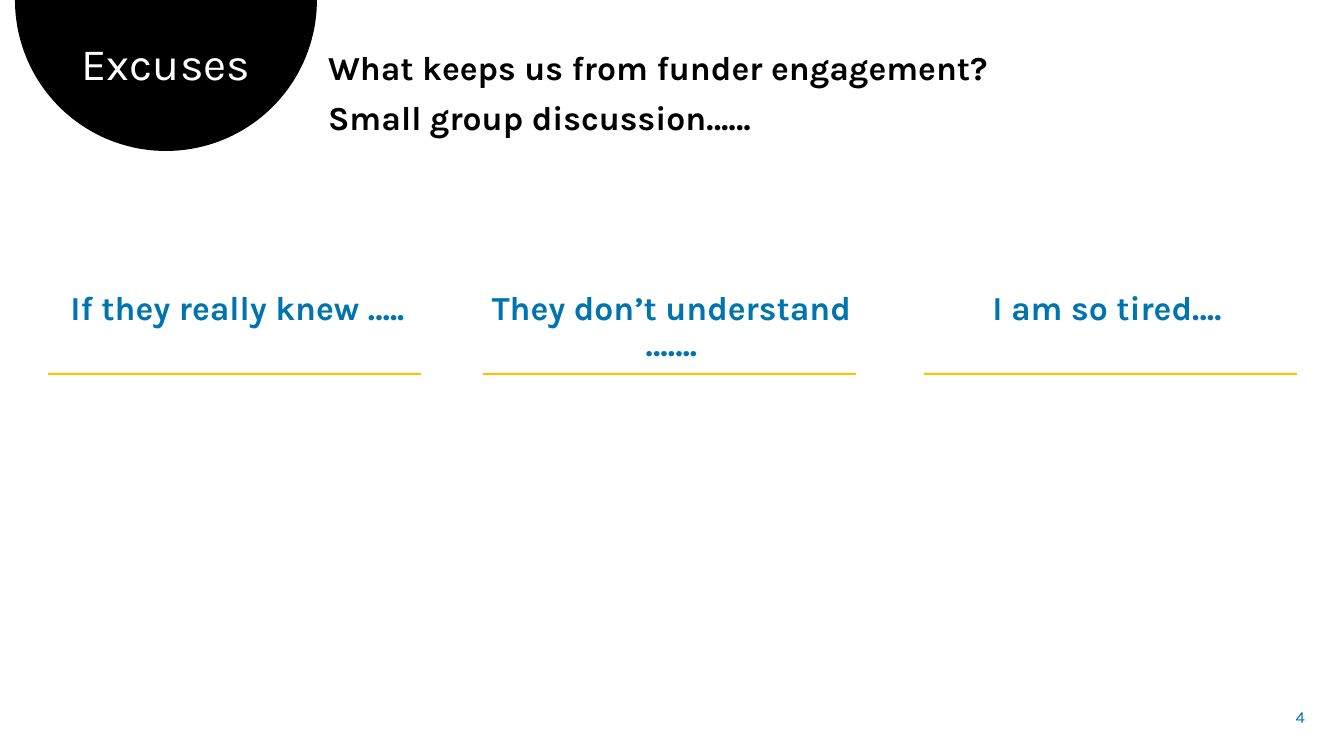
from math import cos, pi, sin

from lxml.etree import SubElement
from pptx import Presentation
from pptx.dml.color import RGBColor
from pptx.enum.shapes import MSO_SHAPE
from pptx.enum.text import MSO_ANCHOR, MSO_AUTO_SIZE, PP_ALIGN
from pptx.oxml.ns import qn
from pptx.util import Emu, Pt

SLIDE_WIDTH, SLIDE_HEIGHT = 1344, 756
SCALE = 12192000 / SLIDE_WIDTH
COLORS = {"black": "000000", "white": "FFFFFF", "blue": "0074AF", "gold": "FFC000"}
FONT = "Karla"
COMPARISON_LAYOUT = 4


def px(length):
    return Emu(round(length * SCALE))


def write_text(shape, *lines, size=24, color="blue", bold=False,
               align=PP_ALIGN.CENTER, anchor=MSO_ANCHOR.TOP, spacing=0.9, gap=0):
    """Fill a shape with one unbulleted paragraph per line, gap points apart."""
    frame = shape.text_frame
    frame.word_wrap = True
    frame.auto_size = MSO_AUTO_SIZE.NONE
    frame.vertical_anchor = anchor
    frame.text = "\n".join(lines)
    for index, paragraph in enumerate(frame.paragraphs):
        paragraph.alignment = align
        paragraph.line_spacing = spacing
        paragraph.space_before = Pt(gap if index else 0)
        properties = paragraph._p.get_or_add_pPr()
        properties.set("marL", "0")
        properties.set("indent", "0")
        SubElement(properties, qn("a:buNone"))
        font = paragraph.runs[0].font
        font.name, font.size, font.bold = FONT, Pt(size), bold
        font.color.rgb = RGBColor.from_string(COLORS[color])


class SlideBuilder:
    def __init__(self, presentation):
        layout = presentation.slide_layouts[COMPARISON_LAYOUT]
        self.slide = presentation.slides.add_slide(layout)
        self.shapes = self.slide.shapes

    def paint(self, shape, color):
        shape.shadow.inherit = False
        shape.fill.solid()
        shape.fill.fore_color.rgb = RGBColor.from_string(COLORS[color])
        shape.line.fill.background()

    def half_disc(self, center, radius, color, steps=90):
        """Hang a half disc from the top edge, behind everything else."""
        angles = [pi * step / steps for step in range(steps + 1)]
        points = [(px(center + radius * cos(angle)), px(radius * sin(angle)))
                  for angle in angles]
        builder = self.shapes.build_freeform(*points[0])
        builder.add_line_segments(points[1:], close=True)
        shape = builder.convert_to_shape()
        self.paint(shape, color)
        shape.element.getparent().insert(2, shape.element)

    def bar(self, left, top, width, height, color):
        shape = self.shapes.add_shape(
            MSO_SHAPE.RECTANGLE, px(left), px(top), px(width), px(height))
        self.paint(shape, color)

    def placeholder(self, index, left, top, width, height, *lines, **text_format):
        shape = self.slide.placeholders[index]
        shape.left, shape.top = px(left), px(top)
        shape.width, shape.height = px(width), px(height)
        write_text(shape, *lines, **text_format)

    def text_box(self, left, top, width, height, *lines, **text_format):
        shape = self.shapes.add_textbox(px(left), px(top), px(width), px(height))
        write_text(shape, *lines, **text_format)


def main():
    presentation = Presentation()
    presentation.slide_width = px(SLIDE_WIDTH)
    presentation.slide_height = px(SLIDE_HEIGHT)
    builder = SlideBuilder(presentation)

    builder.half_disc(166, 151, "black")
    builder.placeholder(0, 35, 37, 262, 59, "Excuses", size=32, color="white")
    builder.placeholder(
        1, 318, 46, 1001, 98,
        "What keeps us from funder engagement?", "Small group discussion……",
        color="black", bold=True, align=PP_ALIGN.LEFT, gap=10)

    # Heading, its left edge and width, left edge of the bar under it
    excuses = [
        ("If they really knew …..", 33, 409, 48),
        ("They don’t understand …….", 460, 423, 483),
        ("I am so tired….", 899, 416, 924),
    ]
    for index, (heading, left, width, bar_left) in enumerate(excuses, start=2):
        builder.placeholder(index, left, 286, width, 46, heading, bold=True)
        builder.bar(bar_left, 373, 373, 2, "gold")

    builder.text_box(1260, 697, 55, 40, "4", size=12, align=PP_ALIGN.RIGHT,
                     anchor=MSO_ANCHOR.MIDDLE, spacing=1.0)
    presentation.save("out.pptx")


if __name__ == "__main__":
    main()
